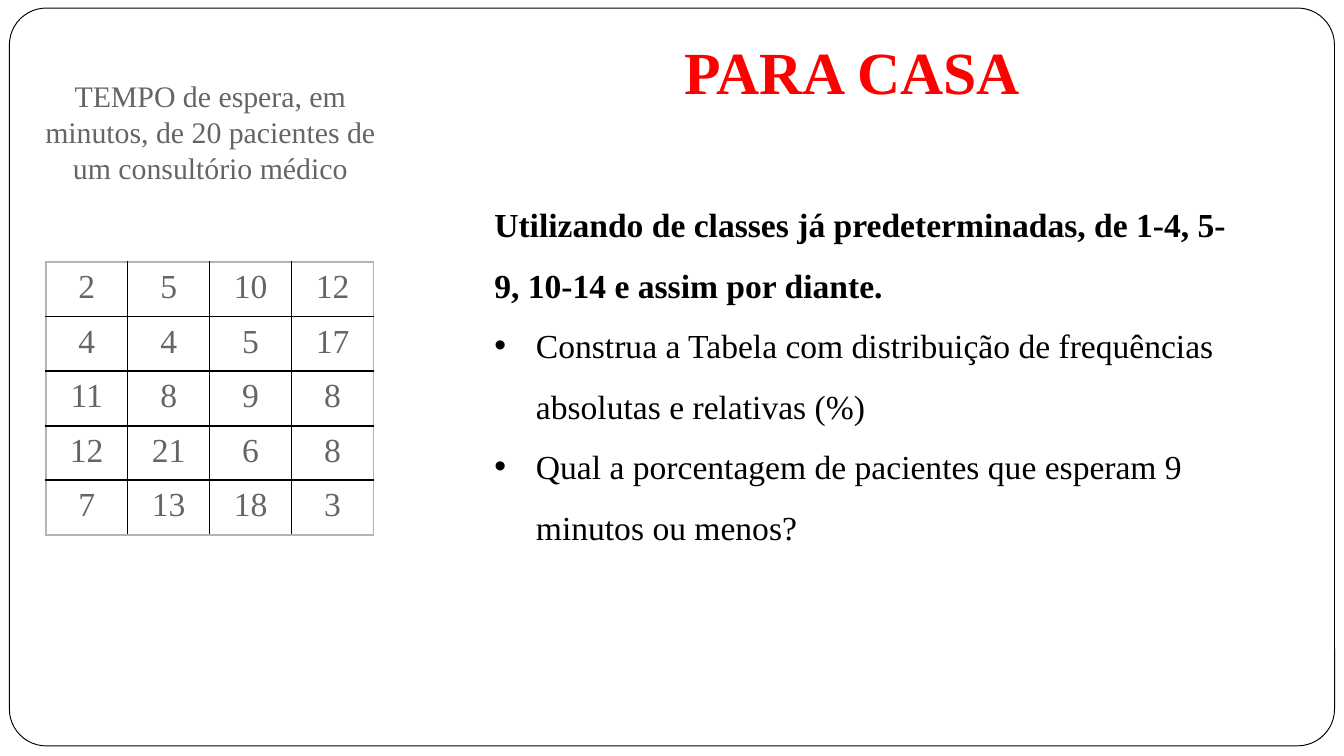
from dataclasses import dataclass

from lxml.etree import SubElement
from pptx import Presentation
from pptx.dml.color import RGBColor
from pptx.enum.shapes import MSO_SHAPE
from pptx.enum.text import MSO_ANCHOR, PP_ALIGN
from pptx.oxml import parse_xml
from pptx.oxml.ns import nsdecls, qn
from pptx.util import Inches, Pt

BLACK = RGBColor(0x00, 0x00, 0x00)
WHITE = RGBColor(0xFF, 0xFF, 0xFF)
RED = RGBColor(0xFF, 0x00, 0x00)
GRAY = RGBColor(0x69, 0x64, 0x64)
LIGHT_GRAY = RGBColor(0xB4, 0xB4, 0xB4)
FONT = "Times New Roman"

WAITING_TIMES = [
    [2, 5, 10, 12],
    [4, 4, 5, 17],
    [11, 8, 9, 8],
    [12, 21, 6, 8],
    [7, 13, 18, 3],
]


@dataclass(frozen=True)
class Box:
    left: float
    top: float
    width: float
    height: float

    def lengths(self) -> tuple:
        return tuple(Inches(n) for n in (self.left, self.top, self.width, self.height))


@dataclass(frozen=True)
class Item:
    text: str
    bold: bool = False
    bullet: bool = False


EXERCISE = [
    Item("Utilizando de classes já predeterminadas, de 1-4, 5-9, 10-14 e assim por diante.", bold=True),
    Item("Construa a Tabela com distribuição de frequências absolutas e relativas (%)", bullet=True),
    Item("Qual a porcentagem de pacientes que esperam 9 minutos ou menos?", bullet=True),
]


def write(paragraph, text: str, *, size: float = 18, color: RGBColor = BLACK, bold: bool = False,
          align=PP_ALIGN.LEFT, spacing: float = 1.0) -> None:
    paragraph.alignment = align
    paragraph.line_spacing = spacing
    run = paragraph.add_run()
    run.text = text
    run.font.name = FONT
    run.font.size = Pt(size)
    run.font.bold = bold
    run.font.color.rgb = color


def add_bullet(paragraph) -> None:
    properties = paragraph._p.get_or_add_pPr()
    indent = Inches(0.31)
    properties.set("marL", str(indent))
    properties.set("indent", str(-indent))
    SubElement(properties, qn("a:buFont")).set("typeface", "Arial")
    SubElement(properties, qn("a:buChar")).set("char", "•")


def add_text_frame(slide, box: Box):
    frame = slide.shapes.add_textbox(*box.lengths()).text_frame
    frame.word_wrap = True
    return frame


def set_borders(cell, colors: dict[str, RGBColor]) -> None:
    """Draw the borders in schema order (lnL, lnR, lnT, lnB), ahead of the fill."""
    properties = cell._tc.get_or_add_tcPr()
    for index, (side, color) in enumerate(colors.items()):
        properties.insert(index, parse_xml(
            f'<a:{side} {nsdecls("a")} w="{Pt(1)}"><a:solidFill>'
            f'<a:srgbClr val="{color}"/></a:solidFill></a:{side}>'))


def add_number_table(slide, box: Box, rows: list[list[int]]) -> None:
    row_count, column_count = len(rows), len(rows[0])
    table = slide.shapes.add_table(row_count, column_count, *box.lengths()).table
    table.first_row = table.horz_banding = False
    for i, values in enumerate(rows):
        for j, value in enumerate(values):
            cell = table.cell(i, j)
            cell.fill.solid()
            cell.fill.fore_color.rgb = WHITE
            write(cell.text_frame.paragraphs[0], str(value), color=GRAY, align=PP_ALIGN.CENTER)
            on_edge = {"lnL": j == 0, "lnR": j == column_count - 1,
                       "lnT": i == 0, "lnB": i == row_count - 1}
            set_borders(cell, {side: LIGHT_GRAY if edge else BLACK for side, edge in on_edge.items()})


def add_frame(slide, box: Box) -> None:
    frame = slide.shapes.add_shape(MSO_SHAPE.ROUNDED_RECTANGLE, *box.lengths())
    frame.adjustments[0] = 0.05
    frame.shadow.inherit = False
    frame.fill.solid()
    frame.fill.fore_color.rgb = WHITE
    frame.line.color.rgb = BLACK
    frame.line.width = Pt(0.5)
    slide.shapes.title.element.addprevious(frame.element)


def set_title(slide, box: Box, text: str) -> None:
    title = slide.shapes.title
    title.left, title.top, title.width, title.height = box.lengths()
    title.text_frame.vertical_anchor = MSO_ANCHOR.TOP
    title.text_frame.word_wrap = True
    write(title.text_frame.paragraphs[0], text, size=32, color=RED, bold=True, align=PP_ALIGN.CENTER)


def add_exercise(slide, box: Box, items: list[Item]) -> None:
    frame = add_text_frame(slide, box)
    for index, item in enumerate(items):
        paragraph = frame.add_paragraph() if index else frame.paragraphs[0]
        write(paragraph, item.text, bold=item.bold, spacing=1.5)
        if item.bullet:
            add_bullet(paragraph)


def main() -> None:
    presentation = Presentation()
    presentation.slide_width = Inches(10)
    presentation.slide_height = presentation.slide_width * 9 // 16
    slide = presentation.slides.add_slide(presentation.slide_layouts[5])

    add_frame(slide, Box(0.07, 0.06, 9.86, 5.49))
    add_number_table(slide, Box(0.34, 1.95, 2.44, 2.03), WAITING_TIMES)
    add_exercise(slide, Box(3.58, 1.32, 5.83, 3.28), EXERCISE)
    caption = add_text_frame(slide, Box(0.11, 0.53, 2.91, 0.91))
    write(caption.paragraphs[0], "TEMPO de espera, em minutos, de 20 pacientes de um consultório médico",
          size=16, color=GRAY, align=PP_ALIGN.CENTER)
    set_title(slide, Box(3.74, 0.21, 5.2, 0.64), "PARA CASA")
    presentation.save("out.pptx")


if __name__ == "__main__":
    main()
